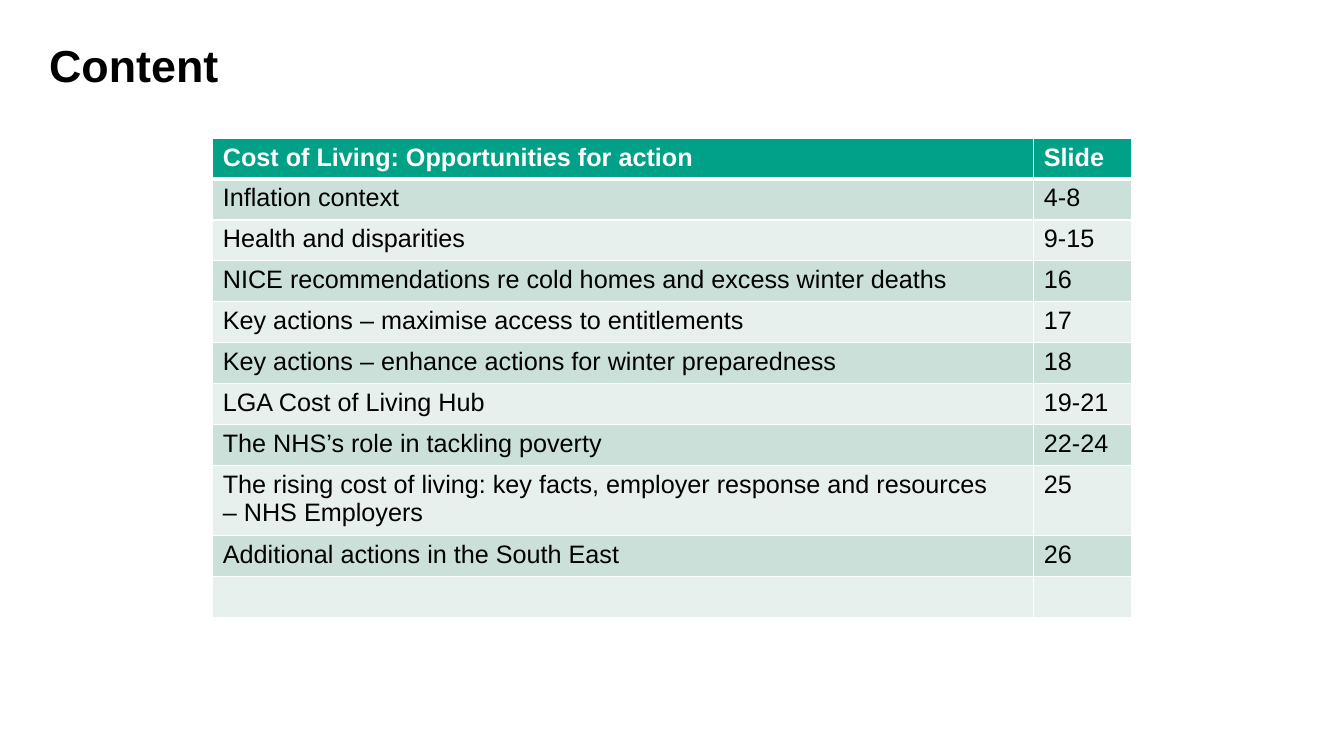
from dataclasses import dataclass

from lxml import etree
from pptx import Presentation
from pptx import util as u
from pptx.dml.color import RGBColor
from pptx.enum import text
from pptx.oxml import ns


@dataclass(frozen=True)
class Theme:
    face: str = "Arial"
    ink: str = "000000"
    white: str = "FFFFFF"
    head: str = "01A188"
    bands: tuple = ("CCE0DA", "E7F0ED")
    title: int = 32
    body: int = 18
    rule: int = 1
    thick: int = 3


THEME = Theme()
TITLE_BOX = (28, 28, 901, 66)
TABLE_BOX = (152, 98.7, 656.3, 321.2)
PAGE_COL = 69.8

ROWS = [
    ("Cost of Living: Opportunities for action", "Slide"),
    ("Inflation context", "4-8"),
    ("Health and disparities", "9-15"),
    ("NICE recommendations re cold homes and excess winter deaths", "16"),
    ("Key actions – maximise access to entitlements", "17"),
    ("Key actions – enhance actions for winter preparedness", "18"),
    ("LGA Cost of Living Hub", "19-21"),
    ("The NHS’s role in tackling poverty", "22-24"),
    ("The rising cost of living: key facts, employer response and resources\n"
     "– NHS Employers", "25"),
    ("Additional actions in the South East", "26"),
    ("", ""),
]


def style(frame, size, color, bold):
    form = {"name": THEME.face, "size": u.Pt(size), "bold": bold}
    for para in frame.paragraphs:
        for run in para.runs:
            for key, value in form.items():
                setattr(run.font, key, value)
            run.font.color.rgb = RGBColor.from_string(color)


def edge(cell, widths):
    """Draw white borders; widths maps L, R, T and B to points."""
    props = cell._tc.get_or_add_tcPr()
    for spot, (side, width) in enumerate(widths.items()):
        line = etree.Element(ns.qn(f"a:ln{side}"), w=str(u.Pt(width)))
        fill = etree.SubElement(line, ns.qn("a:solidFill"))
        etree.SubElement(fill, ns.qn("a:srgbClr"), val=THEME.white)
        props.insert(spot, line)


def add_title(slide, box, words):
    frame = slide.shapes.add_textbox(*map(u.Pt, box)).text_frame
    form = {"word_wrap": True, "vertical_anchor": text.MSO_ANCHOR.TOP,
            "text": words}
    for key, value in form.items():
        setattr(frame, key, value)
    frame.paragraphs[0].line_spacing = 0.9
    style(frame, THEME.title, THEME.ink, True)


def add_index(slide, box, rows):
    """Place the banded table of topics and slide numbers."""
    left, top, width, height = box
    table = slide.shapes.add_table(len(rows), 2, *map(u.Pt, box)).table
    for col, size in zip(table.columns, (width - PAGE_COL, PAGE_COL)):
        col.width = u.Pt(size)
    for i, row in enumerate(rows):
        head = i == 0
        table.rows[i].height = u.Pt(height / len(rows))
        fill = THEME.head if head else THEME.bands[(i - 1) % 2]
        for j, words in enumerate(row):
            cell = table.cell(i, j)
            cell.text = words
            cell.fill.solid()
            cell.fill.fore_color.rgb = RGBColor.from_string(fill)
            edge(cell, {"L": THEME.rule, "R": THEME.rule,
                        "T": THEME.thick if i == 1 else THEME.rule,
                        "B": THEME.thick if head else THEME.rule})
            style(cell.text_frame, THEME.body,
                  THEME.white if head else THEME.ink, head)


def main():
    deck = Presentation()
    deck.slide_width, deck.slide_height = u.Pt(960), u.Pt(540)
    slide = deck.slides.add_slide(deck.slide_layouts[6])
    add_title(slide, TITLE_BOX, "Content")
    add_index(slide, TABLE_BOX, ROWS)
    deck.save("out.pptx")


if __name__ == "__main__":
    main()
